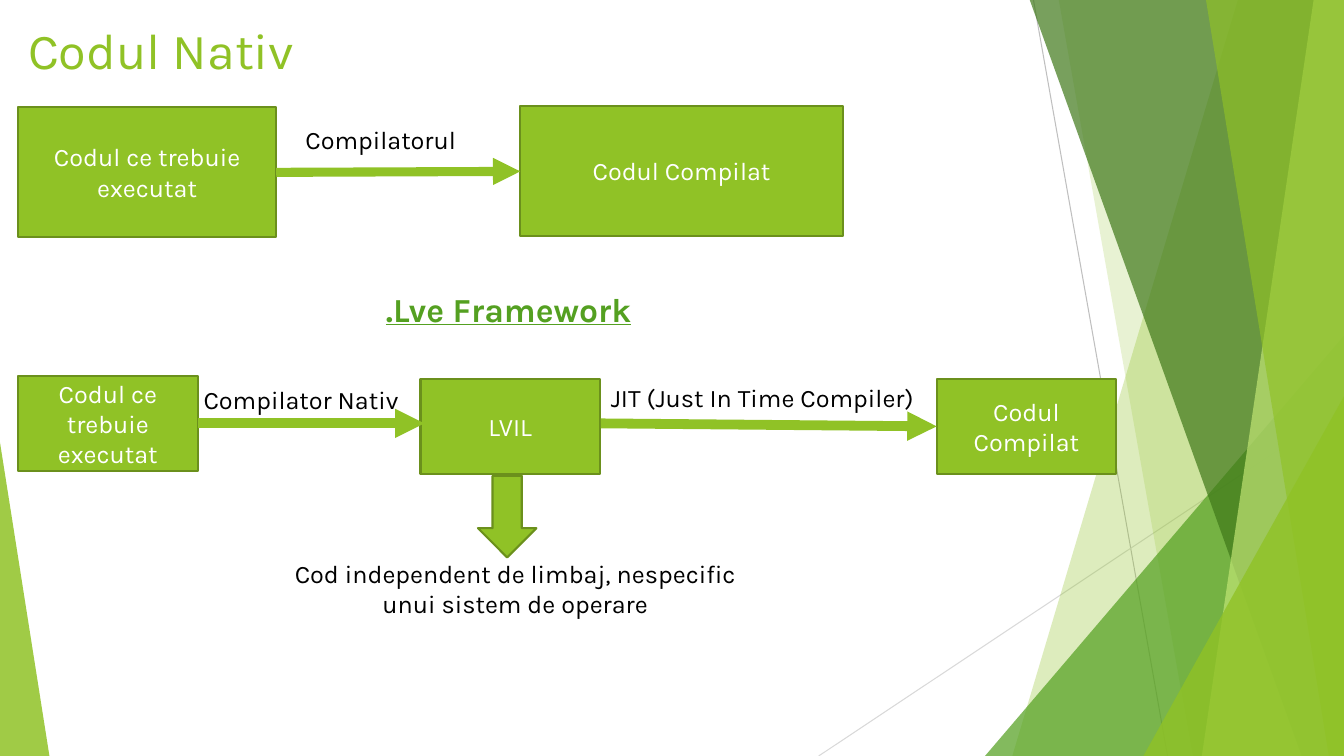
from dataclasses import dataclass

from lxml import etree
from pptx import Presentation
from pptx.dml.color import RGBColor
from pptx.enum.shapes import MSO_CONNECTOR, MSO_SHAPE
from pptx.enum.text import MSO_ANCHOR, PP_ALIGN
from pptx.oxml.ns import qn
from pptx.util import Inches, Pt

RECTANGLE = MSO_SHAPE.RECTANGLE
DOWN_ARROW = MSO_SHAPE.DOWN_ARROW
TRIANGLE = MSO_SHAPE.ISOSCELES_TRIANGLE
STRAIGHT = MSO_CONNECTOR.STRAIGHT
LEFT, CENTER = PP_ALIGN.LEFT, PP_ALIGN.CENTER
TOP, MIDDLE = MSO_ANCHOR.TOP, MSO_ANCHOR.MIDDLE


@dataclass(frozen=True)
class Theme:
    font: str = "Karla"
    green: str = "90C226"
    outline: str = "6B901C"
    mid_green: str = "54A021"
    dark_green: str = "3F7819"
    light_green: str = "C0E474"
    gray: str = "BFBFBF"
    light_gray: str = "D9D9D9"
    white: str = "FFFFFF"
    black: str = "000000"
    title_size: int = 36
    heading_size: int = 24
    body_size: int = 18
    outline_width: float = 1.5


THEME = Theme()
WIDTH, HEIGHT = 13.33, 7.5
BAND_TOP = -0.01


def inches(*values):
    return [Inches(value) for value in values]


def paint(shape, color, opacity=100):
    """Fill a shape, with opacity in percent."""
    shape.shadow.inherit = False
    shape.fill.solid()
    shape.fill.fore_color.rgb = RGBColor.from_string(color)
    if opacity < 100:
        color_element = shape.fill._xPr.find(f".//{qn('a:srgbClr')}")
        etree.SubElement(color_element, qn("a:alpha"), val=str(opacity * 1000))


def write_text(shape, text, color=THEME.black, size=THEME.body_size, align=LEFT,
               anchor=TOP, bold=False, underline=False):
    frame = shape.text_frame
    frame.word_wrap = True
    frame.vertical_anchor = anchor
    paragraph = frame.paragraphs[0]
    paragraph.alignment = align
    run = paragraph.add_run()
    run.text = text
    font = run.font
    font.name = THEME.font
    font.size = Pt(size)
    font.bold = bold
    font.underline = underline
    font.color.rgb = RGBColor.from_string(color)


def add_label(slide, box, text, **text_format):
    write_text(slide.shapes.add_textbox(*inches(*box)), text, **text_format)


def add_block(slide, box, text="", kind=RECTANGLE):
    shape = slide.shapes.add_shape(kind, *inches(*box))
    paint(shape, THEME.green)
    shape.line.color.rgb = RGBColor.from_string(THEME.outline)
    shape.line.width = Pt(THEME.outline_width)
    if text:
        write_text(shape, text, color=THEME.white, align=CENTER, anchor=MIDDLE)


def add_line(slide, start, end, color, width, arrow=False):
    connector = slide.shapes.add_connector(STRAIGHT, *inches(*start, *end))
    connector.line.color.rgb = RGBColor.from_string(color)
    connector.line.width = Pt(width)
    if arrow:
        line_element = connector.line._get_or_add_ln()
        etree.SubElement(line_element, qn("a:tailEnd"), type="triangle")
    etree.SubElement(connector._element.spPr, qn("a:effectLst"))


def add_band(slide, top_left, bottom_left, color, opacity):
    """Add a slanted band that runs to the right edge of the slide."""
    builder = slide.shapes.build_freeform(*inches(top_left, BAND_TOP), scale=1.0)
    corners = [(WIDTH, BAND_TOP), (WIDTH, HEIGHT), (bottom_left, HEIGHT)]
    builder.add_line_segments([inches(*corner) for corner in corners], close=True)
    band = builder.convert_to_shape()
    paint(band, color, opacity)
    band.line.fill.background()


def add_corner(slide, left, top, width, apex, color, opacity):
    """Add a triangle on the bottom edge; apex is 0 for left, 1 for right."""
    box = inches(left, top, width, HEIGHT - top)
    corner = slide.shapes.add_shape(TRIANGLE, *box)
    corner.adjustments[0] = apex
    paint(corner, color, opacity)
    corner.line.fill.background()


def add_backdrop(slide):
    add_line(slide, (10.25, 0), (11.58, HEIGHT), THEME.gray, 0.75)
    add_line(slide, (WIDTH, 4.03), (8.12, HEIGHT), THEME.light_gray, 0.75)
    add_band(slide, 12.28, 10.04, THEME.green, 30)
    add_band(slide, 10.5, 11.83, THEME.green, 20)
    add_corner(slide, 9.77, 3.33, 3.56, 1, THEME.mid_green, 72)
    add_band(slide, 10.21, 12.91, THEME.dark_green, 70)
    add_band(slide, 13.03, 11.92, THEME.light_green, 70)
    add_band(slide, 11.96, 13.18, THEME.green, 65)
    add_corner(slide, 11.34, 3.93, 1.99, 1, THEME.green, 80)
    add_corner(slide, 0, 4.39, 0.49, 0, THEME.green, 85)


def add_native_flow(slide):
    add_block(slide, (0.18, 1.06, 2.56, 1.29), "Codul ce trebuie executat")
    add_block(slide, (5.16, 1.05, 3.2, 1.29), "Codul Compilat")
    add_line(slide, (2.74, 1.71), (5.16, 1.7), THEME.green, 6.5, arrow=True)
    add_label(slide, (2.93, 1.18, 1.71, 0.4), "Compilatorul")


def add_framework_flow(slide):
    steps = [(0.18, 3.73, "Codul ce trebuie executat"),
             (4.17, 3.76, "LVIL"),
             (9.29, 3.76, "Codul Compilat")]
    for left, top, text in steps:
        add_block(slide, (left, top, 1.78, 0.94), text)
    add_line(slide, (1.96, 4.2), (4.21, 4.2), THEME.green, 7, arrow=True)
    add_line(slide, (5.96, 4.2), (9.29, 4.23), THEME.green, 7, arrow=True)
    add_label(slide, (1.92, 3.76, 2.29, 0.4), "Compilator Nativ")
    add_label(slide, (5.96, 3.74, 4.18, 0.4), "JIT (Just In Time Compiler)")
    add_block(slide, (4.74, 4.72, 0.58, 0.81), kind=DOWN_ARROW)
    add_label(slide, (2.74, 5.49, 4.74, 0.71),
              "Cod independent de limbaj, nespecific unui sistem de operare",
              align=CENTER)


def main():
    presentation = Presentation()
    presentation.slide_width, presentation.slide_height = inches(WIDTH, HEIGHT)
    slide = presentation.slides.add_slide(presentation.slide_layouts[6])
    add_backdrop(slide)
    add_label(slide, (0.18, 0.14, 8.63, 0.93), "Codul Nativ",
              color=THEME.green, size=THEME.title_size)
    add_native_flow(slide)
    add_label(slide, (3.73, 2.82, 3.24, 0.5), ".Lve Framework", bold=True,
              color=THEME.mid_green, size=THEME.heading_size, underline=True)
    add_framework_flow(slide)
    presentation.save("out.pptx")


if __name__ == "__main__":
    main()
